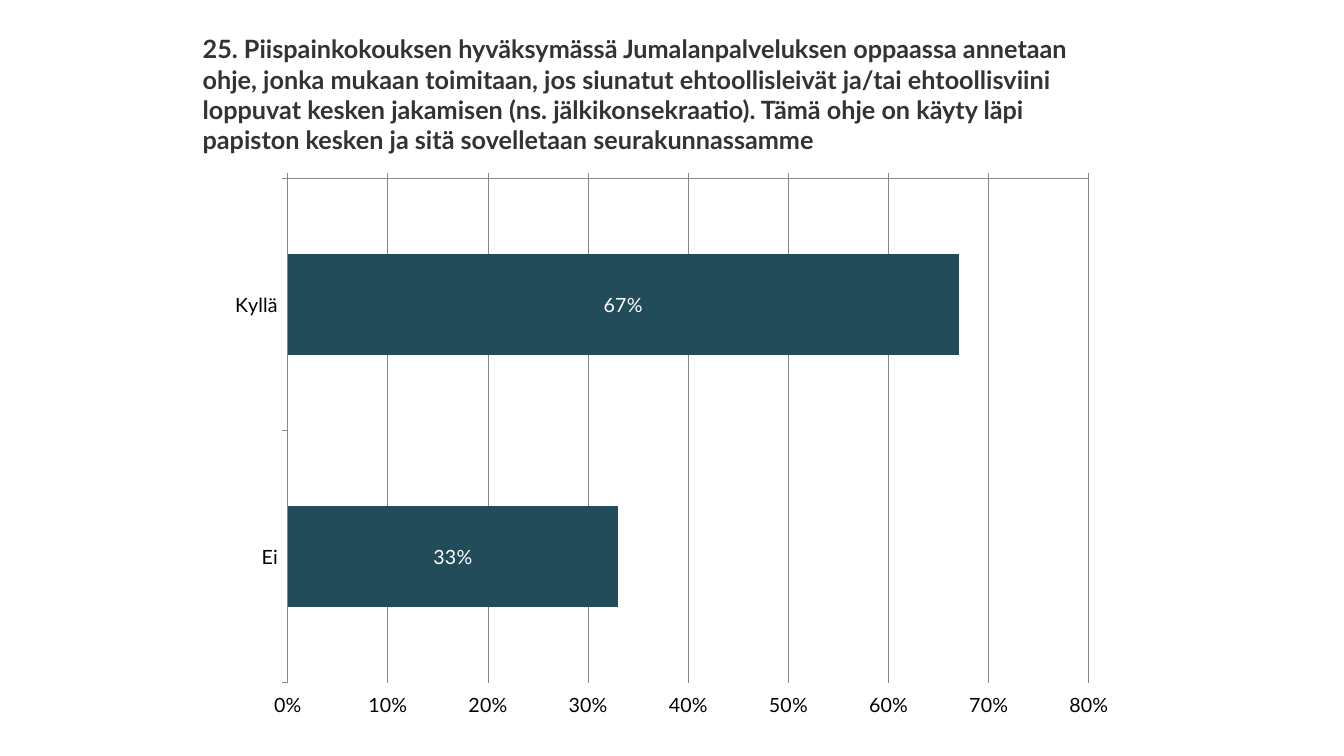
from dataclasses import dataclass

from lxml import etree
from pptx import Presentation
from pptx.chart.data import CategoryChartData
from pptx.dml.color import RGBColor
from pptx.enum.chart import XL_CHART_TYPE, XL_LABEL_POSITION, XL_TICK_LABEL_POSITION, XL_TICK_MARK
from pptx.enum.text import MSO_ANCHOR, PP_ALIGN
from pptx.oxml.ns import qn
from pptx.util import Inches, Pt

BAR_CLUSTERED = XL_CHART_TYPE.BAR_CLUSTERED
LABEL_CENTER = XL_LABEL_POSITION.CENTER
LABELS_LOW = XL_TICK_LABEL_POSITION.LOW
LABELS_HIGH = XL_TICK_LABEL_POSITION.HIGH
TICK_CROSS = XL_TICK_MARK.OUTSIDE
MIDDLE = MSO_ANCHOR.MIDDLE
LEFT = PP_ALIGN.LEFT

WIDTH, HEIGHT = Inches(13.33), Inches(7.5)
TITLE_ONLY = 5
FONT = "Lato"
COLOURS = {"title": "333333", "text": "000000", "bar": "234C5A", "label": "FFFFFF", "line": "868686"}
QUESTION = (
    "25. Piispainkokouksen hyväksymässä Jumalanpalveluksen oppaassa annetaan ohje, "
    "jonka mukaan toimitaan, jos siunatut ehtoollisleivät ja/tai ehtoollisviini "
    "loppuvat kesken jakamisen (ns. jälkikonsekraatio). Tämä ohje on käyty läpi "
    "papiston kesken ja sitä sovelletaan seurakunnassamme"
)


@dataclass(frozen=True)
class Area:
    left: float
    top: float
    width: float
    height: float


@dataclass(frozen=True)
class Answer:
    name: str
    share: float


TITLE_AREA = Area(1.91, 0.28, 8.91, 1.31)
CHART_AREA = Area(2.15, 1.66, 9.03, 5.56)
PLOT_SHARES = Area(0.078, 0.02, 0.88, 0.9)
ANSWERS = [Answer("Kyllä", 0.67), Answer("Ei", 0.33)]


def colour(name: str) -> RGBColor:
    return RGBColor.from_string(COLOURS[name])


def style_font(font, size: int, colour_name: str, bold: bool = False) -> None:
    font.name = FONT
    font.size = Pt(size)
    font.bold = bold
    font.color.rgb = colour(colour_name)


def style_line(line) -> None:
    line.width = Pt(0.75)
    line.color.rgb = colour("line")


def add_title(page) -> None:
    title = page.shapes.title
    title.left, title.top = Inches(TITLE_AREA.left), Inches(TITLE_AREA.top)
    title.width, title.height = Inches(TITLE_AREA.width), Inches(TITLE_AREA.height)
    frame = title.text_frame
    frame.word_wrap = True
    frame.vertical_anchor = MIDDLE
    para = frame.paragraphs[0]
    para.alignment = LEFT
    span = para.add_run()
    span.text = QUESTION
    style_font(span.font, 18, "title", bold=True)


def place_plot(chart, shares: Area) -> None:
    """Fix the inner plot area at the given shares of the chart."""
    plot_area = chart._chartSpace.find(".//" + qn("c:plotArea"))
    for old_layout in plot_area.findall(qn("c:layout")):
        plot_area.remove(old_layout)
    layout = etree.Element(qn("c:layout"))
    manual = etree.SubElement(layout, qn("c:manualLayout"))
    settings = {
        "layoutTarget": "inner", "xMode": "edge", "yMode": "edge",
        "x": shares.left, "y": shares.top, "w": shares.width, "h": shares.height,
    }
    for tag, value in settings.items():
        etree.SubElement(manual, qn("c:" + tag)).set("val", str(value))
    plot_area.insert(0, layout)


def style_axes(chart) -> None:
    for axis in (chart.category_axis, chart.value_axis):
        axis.major_tick_mark = TICK_CROSS
        axis.minor_tick_mark = XL_TICK_MARK.NONE
        style_line(axis.format.line)
        style_font(axis.tick_labels.font, 14, "text")

    chart.category_axis.reverse_order = True
    chart.category_axis.tick_label_position = LABELS_LOW
    chart.category_axis.has_major_gridlines = False

    shares = chart.value_axis
    shares.minimum_scale, shares.maximum_scale, shares.major_unit = 0, 0.8, 0.1
    shares.tick_label_position = LABELS_HIGH
    shares.tick_labels.number_format = "0%"
    shares.tick_labels.number_format_is_linked = False
    shares.has_major_gridlines = True
    style_line(shares.major_gridlines.format.line)


def add_answer_chart(page) -> None:
    data = CategoryChartData(number_format="0%")
    data.categories = [answer.name for answer in ANSWERS]
    data.add_series("Series 1", [answer.share for answer in ANSWERS])
    area = CHART_AREA
    chart = page.shapes.add_chart(
        BAR_CLUSTERED, Inches(area.left), Inches(area.top),
        Inches(area.width), Inches(area.height), data,
    ).chart
    chart.has_title = False
    chart.has_legend = False
    style_font(chart.font, 14, "text")
    place_plot(chart, PLOT_SHARES)
    style_axes(chart)

    plot = chart.plots[0]
    plot.gap_width = 150
    plot.vary_by_categories = False
    fill = plot.series[0].format.fill
    fill.solid()
    fill.fore_color.rgb = colour("bar")
    plot.has_data_labels = True
    labels = plot.data_labels
    labels.show_value = True
    labels.number_format = "0%"
    labels.number_format_is_linked = False
    labels.position = LABEL_CENTER
    style_font(labels.font, 14, "label")


def main() -> None:
    deck = Presentation()
    deck.slide_width, deck.slide_height = WIDTH, HEIGHT
    page = deck.slides.add_slide(deck.slide_layouts[TITLE_ONLY])
    add_title(page)
    add_answer_chart(page)
    deck.save("out.pptx")


if __name__ == "__main__":
    main()
